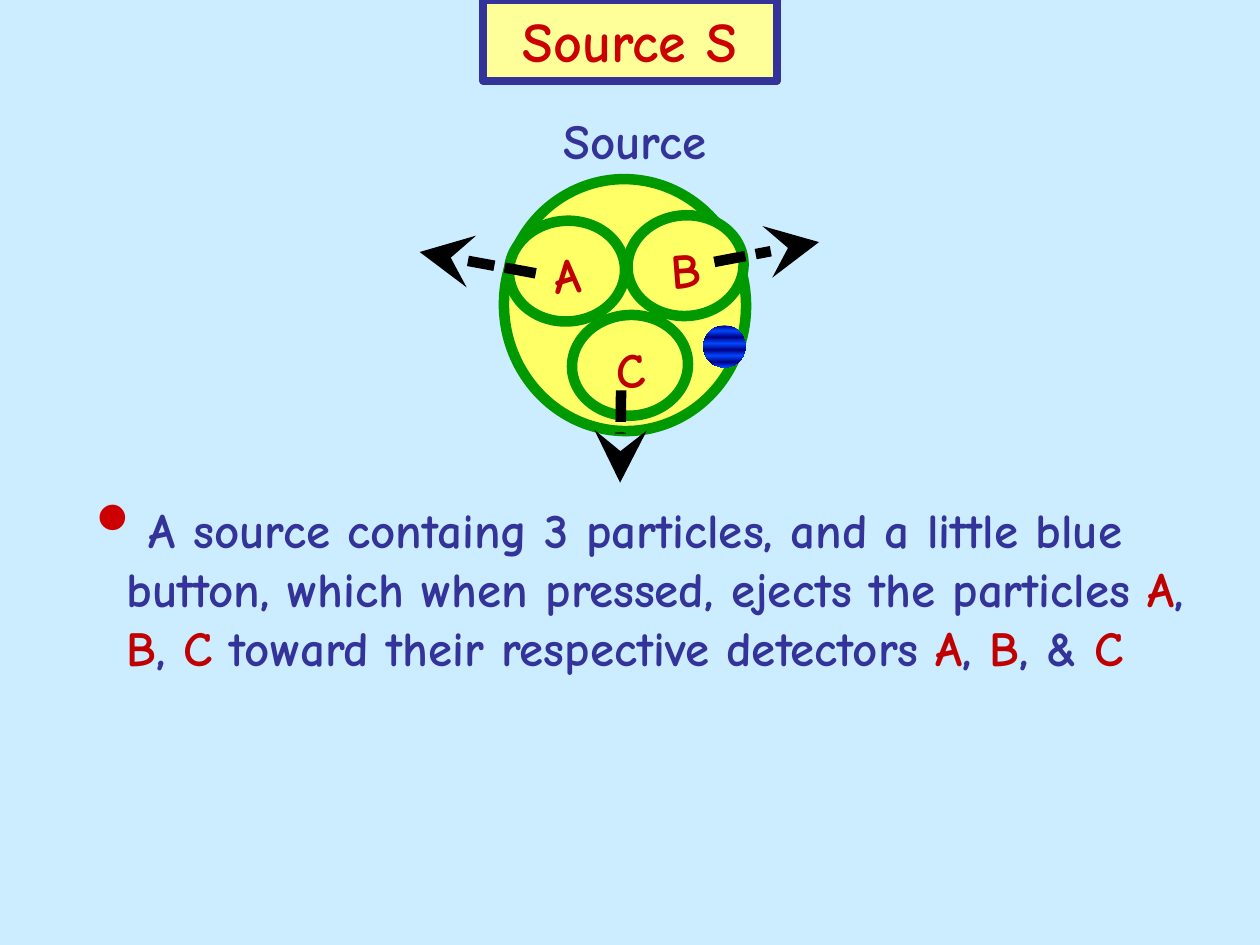
from lxml.etree import SubElement
from pptx import Presentation
from pptx.dml.color import RGBColor
from pptx.enum.dml import MSO_LINE
from pptx.enum.shapes import MSO_CONNECTOR, MSO_SHAPE
from pptx.enum.text import MSO_ANCHOR, PP_ALIGN
from pptx.oxml.ns import qn
from pptx.util import Cm, Pt

COLORS = {
    "sky": "CCECFF", "yellow": "FFFF66", "pale": "FFFF99", "green": "009900",
    "navy": "333399", "red": "CC0000", "letter": "C00000", "black": "000000",
    "dark": "000082", "bright": "0047FF",
}


def color(name):
    return RGBColor.from_string(COLORS[name])


def write(shape, pieces, size=28, align=PP_ALIGN.CENTER):
    """Fill the shape's single paragraph with (text, colour name) pieces."""
    frame = shape.text_frame
    frame.word_wrap = True
    para = frame.paragraphs[0]
    para.alignment = align
    for text, tint in pieces:
        span = para.add_run()
        span.text = text
        span.font.name = "Comic Neue"
        span.font.size = Pt(size)
        span.font.bold = True
        span.font.color.rgb = color(tint)
    return para


deck = Presentation()
deck.slide_width, deck.slide_height = Cm(25.4), Cm(19.05)
page = deck.slides.add_slide(deck.slide_layouts[6])
page.background.fill.solid()
page.background.fill.fore_color.rgb = color("sky")

# Source and the three particles inside it: letter, left, top, width, height
circles = [
    ("", 10.16, 3.61, 4.88, 5.08),
    ("B", 12.65, 4.34, 2.34, 2.03),
    ("A", 10.26, 4.45, 2.34, 2.03),
    ("C", 11.53, 6.35, 2.34, 2.03),
]
for letter, *place in circles:
    circle = page.shapes.add_shape(MSO_SHAPE.OVAL, *map(Cm, place))
    circle.rotation = 355.6
    circle.shadow.inherit = False
    circle.fill.solid()
    circle.fill.fore_color.rgb = color("yellow")
    circle.line.color.rgb = color("green")
    circle.line.width = Pt(6)
    if letter:
        frame = circle.text_frame
        frame.margin_left = frame.margin_right = 0
        frame.margin_top, frame.margin_bottom = Cm(0.13), 0
        frame.vertical_anchor = MSO_ANCHOR.MIDDLE
        write(circle, [(letter, "letter")])

label = page.shapes.add_textbox(Cm(10.36), Cm(2.11), Cm(4.88), Cm(1.45))
write(label, [("Source", "navy")])

# Flight directions of B, A and C
flights = [
    (14.4, 5.28, 16.51, 4.88),
    (10.8, 5.51, 8.46, 5.08),
    (12.52, 7.87, 12.5, 9.73),
]
for ends in flights:
    arrow = page.shapes.add_connector(MSO_CONNECTOR.STRAIGHT, *map(Cm, ends))
    arrow.line.color.rgb = color("black")
    arrow.line.width = Pt(6)
    arrow.line.dash_style = MSO_LINE.SQUARE_DOT
    properties = arrow._element.spPr
    SubElement(properties.find(qn("a:ln")), qn("a:tailEnd"),
               type="stealth", w="lg", len="lg")
    SubElement(properties, qn("a:effectLst"))

title = page.shapes.add_shape(MSO_SHAPE.RECTANGLE, Cm(9.74), Cm(0), Cm(5.92), Cm(1.63))
title.shadow.inherit = False
title.fill.solid()
title.fill.fore_color.rgb = color("pale")
title.line.color.rgb = color("navy")
title.line.width = Pt(4.5)
write(title, [("Source S", "red")], size=32)

body = page.shapes.add_textbox(Cm(1.7), Cm(9.95), Cm(22.86), Cm(5.05))
para = write(body, [
    (" A source containg 3 particles, and a little blue button, "
     "which when pressed, ejects the particles ", "navy"),
    ("A", "letter"), (", ", "navy"), ("B", "letter"), (", ", "navy"), ("C", "letter"),
    (" toward their respective detectors ", "navy"),
    ("A", "letter"), (", ", "navy"), ("B", "letter"), (", & ", "navy"), ("C", "letter"),
], align=PP_ALIGN.LEFT)
bullet = para._p.get_or_add_pPr()
bullet.set("marL", str(Cm(0.6)))
bullet.set("indent", str(-Cm(0.6)))
SubElement(SubElement(bullet, qn("a:buClr")), qn("a:srgbClr"), val=COLORS["red"])
SubElement(bullet, qn("a:buSzPct"), val="200000")
SubElement(bullet, qn("a:buChar"), char="•")

# Blue button with alternating bands
button = page.shapes.add_shape(MSO_SHAPE.OVAL, Cm(14.18), Cm(6.56), Cm(0.85), Cm(0.85))
button.shadow.inherit = False
button.line.fill.background()
button.fill.gradient()
button.fill.gradient_angle = 270
stops = button._element.spPr.find(".//" + qn("a:gsLst"))
for stop in list(stops):
    stops.remove(stop)
for index, percent in enumerate([0, 13, 28, 43, 58, 72, 87, 100]):
    stop = SubElement(stops, qn("a:gs"), pos=str(percent * 1000))
    SubElement(stop, qn("a:srgbClr"), val=COLORS["bright" if index % 2 else "dark"])

deck.save("out.pptx")
